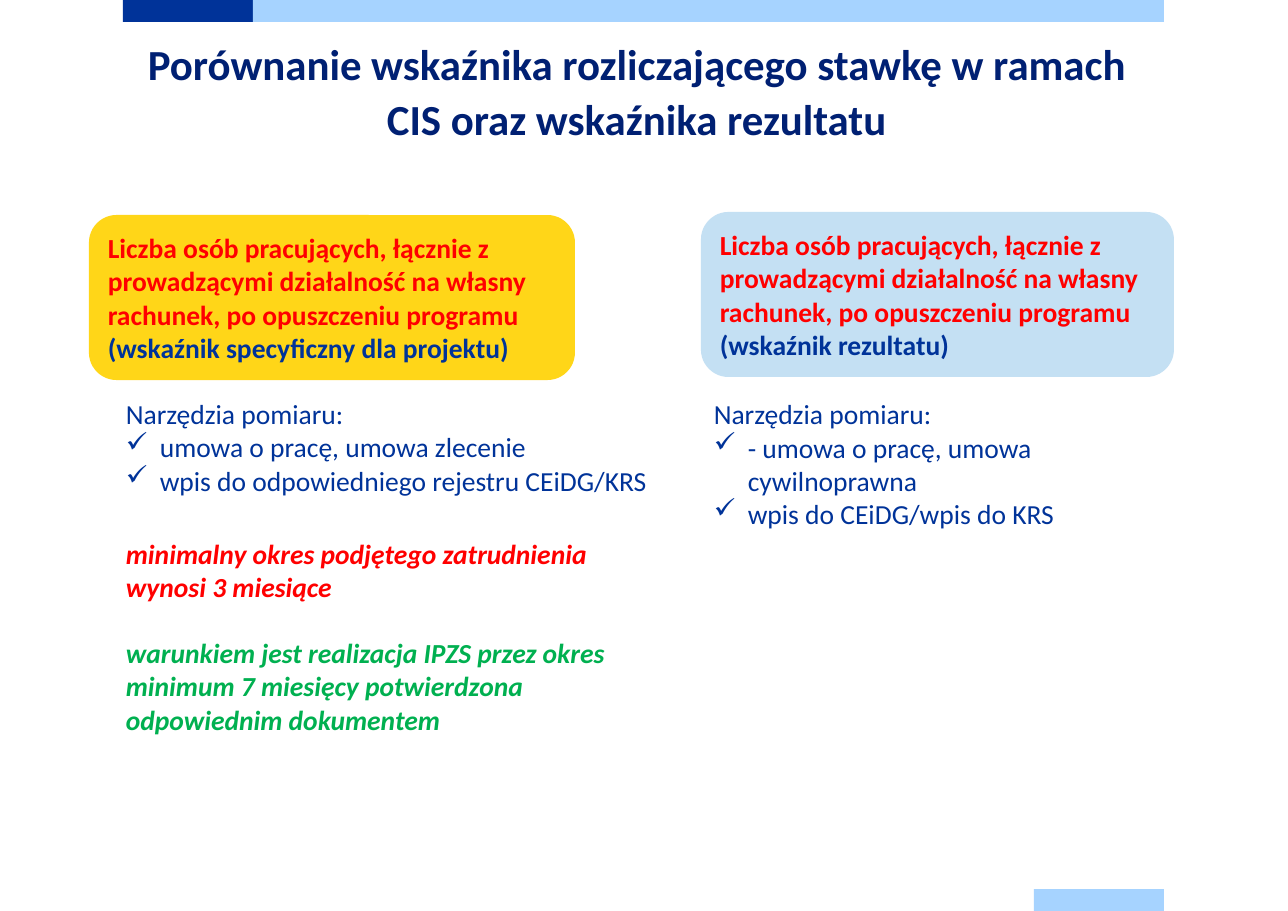
from lxml import etree
from pptx import Presentation
from pptx import util as u
from pptx.dml.color import RGBColor
from pptx.enum import shapes, text
from pptx.oxml.ns import qn

NAVY = RGBColor(0x00, 0x33, 0x99)
TITLE_BLUE = RGBColor(0x00, 0x20, 0x73)
SKY = RGBColor(0xA6, 0xD3, 0xFF)
PALE_BLUE = RGBColor(0xC4, 0xE0, 0xF3)
YELLOW = RGBColor(0xFF, 0xD6, 0x18)
RED = RGBColor(0xFF, 0x00, 0x00)
GREEN = RGBColor(0x00, 0xB0, 0x50)

FONT = "Calibri"
EMU_PER_PX = 914400 / 110.2
TITLE_ONLY = 5


def px(length):
    return u.Emu(round(length * EMU_PER_PX))


def write(para, words, *, size=18, color=NAVY, bold=False, italic=False):
    """Append words to a paragraph; a newline becomes a line break."""
    for number, line in enumerate(words.split("\n")):
        if number:
            para.add_line_break()
        span = para.add_run()
        span.text = line
        font = span.font
        font.name, font.size = FONT, u.Pt(size)
        font.bold, font.italic = bold, italic
        font.color.rgb = color


def add_check_bullet(para, indent=34):
    props = para._p.get_or_add_pPr()
    props.set("marL", str(px(indent)))
    props.set("indent", str(-px(indent)))
    etree.SubElement(props, qn("a:buChar")).set("char", "✓")


class SlideBuilder:
    def __init__(self, deck):
        self.page = deck.slides.add_slide(deck.slide_layouts[TITLE_ONLY])

    def title(self, words, *place):
        box = self.page.shapes.title
        box.left, box.top, box.width, box.height = map(px, place)
        frame = box.text_frame
        frame.margin_left = frame.margin_right = 0
        frame.margin_top = frame.margin_bottom = 0
        frame.word_wrap = True
        frame.auto_size = text.MSO_AUTO_SIZE.NONE
        frame.vertical_anchor = text.MSO_ANCHOR.TOP
        para = frame.paragraphs[0]
        para.alignment = text.PP_ALIGN.CENTER
        para.line_spacing = u.Pt(36)
        write(para, words, size=28, color=TITLE_BLUE, bold=True)

    def shape(self, kind, fill, *place):
        box = self.page.shapes.add_shape(kind, *map(px, place))
        box.shadow.inherit = False
        box.fill.solid()
        box.fill.fore_color.rgb = fill
        box.line.fill.background()
        return box

    def bar(self, fill, *place):
        self.shape(shapes.MSO_SHAPE.RECTANGLE, fill, *place)

    def indicator(self, fill, kind, *place):
        box = self.shape(shapes.MSO_SHAPE.ROUNDED_RECTANGLE, fill, *place)
        frame = box.text_frame
        frame.word_wrap = True
        frame.vertical_anchor = text.MSO_ANCHOR.MIDDLE
        para = frame.paragraphs[0]
        para.alignment = text.PP_ALIGN.LEFT
        write(para, "Liczba osób pracujących, łącznie z prowadzącymi działalność "
              "na własny rachunek, po opuszczeniu programu ", color=RED, bold=True)
        write(para, f"({kind})", bold=True)

    def text_box(self, words, *place, **style):
        frame = self.page.shapes.add_textbox(*map(px, place)).text_frame
        frame.word_wrap = True
        write(frame.paragraphs[0], words, **style)
        return frame

    def tools(self, items, *place):
        """List the measuring tools under their heading."""
        frame = self.text_box("Narzędzia pomiaru:", *place)
        for item in items:
            para = frame.add_paragraph()
            add_check_bullet(para)
            write(para, item)


def main():
    deck = Presentation()
    deck.slide_width, deck.slide_height = px(1288), px(911)
    slide = SlideBuilder(deck)

    slide.bar(NAVY, 123, 0, 130, 22)
    slide.bar(SKY, 253, 0, 911, 22)
    slide.bar(SKY, 1034, 889, 130, 22)

    slide.title("Porównanie wskaźnika rozliczającego stawkę w ramach CIS "
                "oraz wskaźnika rezultatu", 116, 34, 1041, 130)

    slide.indicator(YELLOW, "wskaźnik specyficzny dla projektu", 89, 215, 486, 165)
    slide.tools(["umowa o pracę, umowa zlecenie",
                 "wpis do odpowiedniego rejestru CEiDG/KRS"], 115, 392, 644, 111)
    slide.text_box("minimalny okres podjętego zatrudnienia\nwynosi 3 miesiące",
                   115, 532, 500, 78, color=RED, bold=True, italic=True)
    slide.text_box("warunkiem jest realizacja IPZS przez okres minimum 7 miesięcy "
                   "potwierdzona odpowiednim dokumentem",
                   115, 631, 541, 111, color=GREEN, bold=True, italic=True)

    slide.indicator(PALE_BLUE, "wskaźnik rezultatu", 701, 212, 473, 165)
    slide.tools(["- umowa o pracę, umowa cywilnoprawna",
                 "wpis do CEiDG/wpis do KRS"], 703, 392, 486, 144)

    deck.save("out.pptx")


if __name__ == "__main__":
    main()
